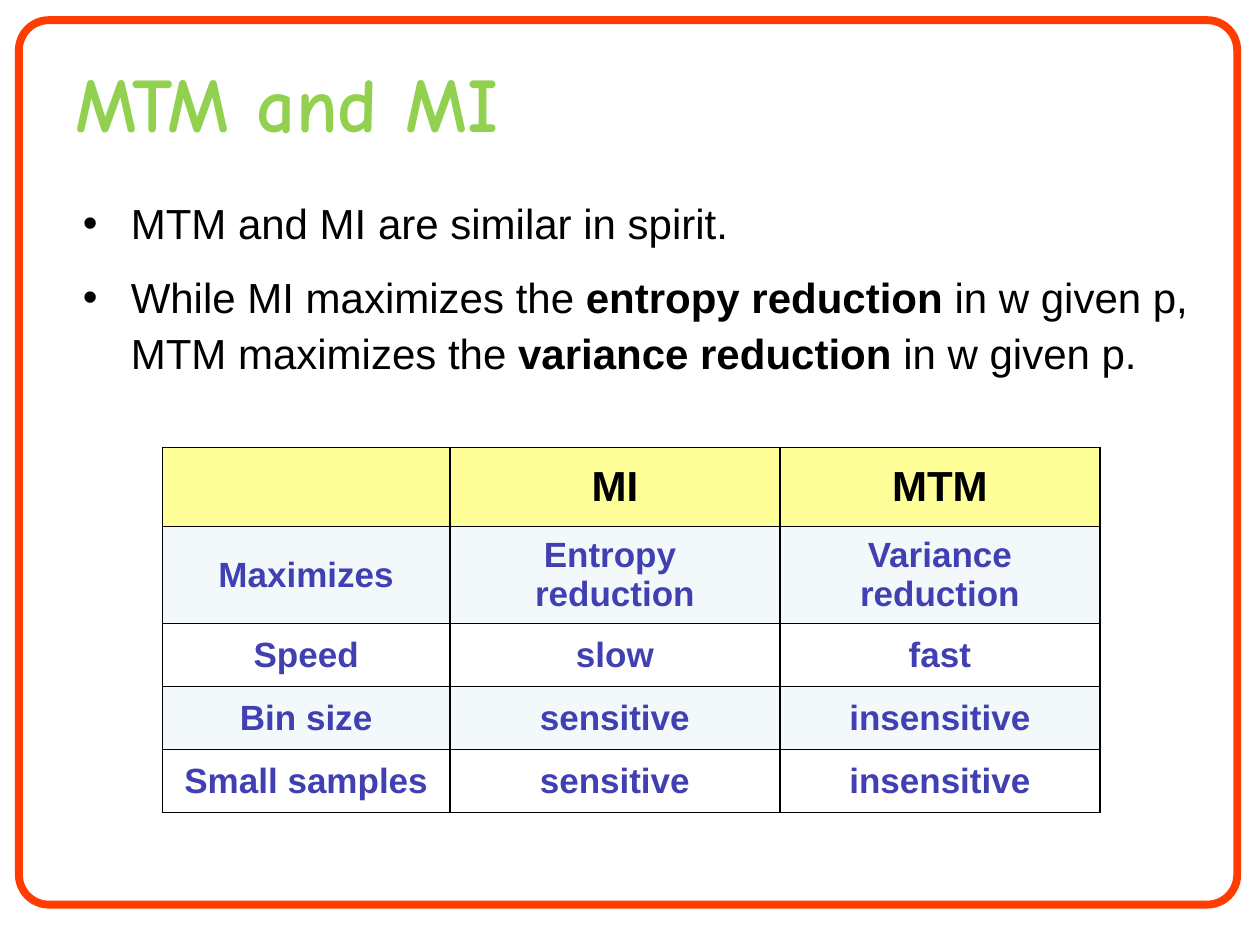
from lxml import etree
from pptx import Presentation
from pptx import util as u
from pptx.dml.color import RGBColor
from pptx.enum import shapes, text
from pptx.oxml import ns

prs = Presentation()
prs.slide_width, prs.slide_height = u.Inches(10), u.Inches(7.5)
W, H = prs.slide_width / 100, prs.slide_height / 100
s = prs.slides.add_slide(prs.slide_layouts[6])


def box(x, y, w, h):
    return [round(v) for v in (x * W, y * H, w * W, h * H)]


def add_run(p, words, size, color, bold=False, font="Arial"):
    r = p.add_run()
    r.text = words
    r.font.name, r.font.size, r.font.bold = font, u.Pt(size), bold
    r.font.color.rgb = RGBColor.from_string(color)


frame = s.shapes.add_shape(shapes.MSO_SHAPE.ROUNDED_RECTANGLE, *box(1.5, 2.13, 96.7, 93.6))
frame.adjustments[0] = 0.034
frame.shadow.inherit = False
frame.fill.background()
frame.line.color.rgb = RGBColor.from_string("FF3D01")
frame.line.width = u.Pt(4.5)

body = s.shapes.add_textbox(*box(5.6, 19.73, 90, 74.53))
tf = body.text_frame
tf.word_wrap = True
bullets = [
    ["MTM and MI are similar in spirit."],
    ["While MI maximizes the ", "entropy reduction ", "in w given p, MTM maximizes the ",
     "variance reduction ", "in w given p."],
]
for i, parts in enumerate(bullets):
    p = tf.add_paragraph() if i else tf.paragraphs[0]
    p.line_spacing, p.space_before, p.space_after = 1.1, u.Pt(4.8), u.Pt(6)
    pPr = p._p.get_or_add_pPr()
    pPr.set("marL", str(u.Inches(0.38)))
    pPr.set("indent", str(-u.Inches(0.38)))
    etree.SubElement(pPr, ns.qn("a:buFont")).set("typeface", "Arial")
    etree.SubElement(pPr, ns.qn("a:buChar")).set("char", "•")
    for j, words in enumerate(parts):
        add_run(p, words, 24, "000000", j % 2 == 1)

title = s.shapes.add_textbox(*box(5, 5.2, 89.4, 11.2))
tf = title.text_frame
tf.word_wrap = True
tf.vertical_anchor = text.MSO_ANCHOR.MIDDLE
add_run(tf.paragraphs[0], "MTM and MI", 44, "92D050", True, "Comic Neue")

rows = [
    ["", "MI", "MTM"],
    ["Maximizes", "Entropy  reduction", "Variance reduction"],
    ["Speed", "slow", "fast"],
    ["Bin size", "sensitive", "insensitive"],
    ["Small samples", "sensitive", "insensitive"],
]
table = s.shapes.add_table(5, 3, *box(12.9, 47.33, 74.4, 38.67)).table
for col, width in zip(table.columns, [22.8, 26.2, 25.4]):
    col.width = round(width * W)
for row, height in zip(table.rows, [8.4, 10.27] + [6.67] * 3):
    row.height = round(height * H)
for i, row in enumerate(rows):
    size, color = (20, "4040B3") if i else (24, "000000")
    fill = ("F3F9FA" if i % 2 else "FFFFFF") if i else "FFFF99"
    for j, words in enumerate(row):
        cell = table.cell(i, j)
        cell.vertical_anchor = text.MSO_ANCHOR.MIDDLE
        tcPr = cell._tc.get_or_add_tcPr()
        for side in ("lnL", "lnR", "lnT", "lnB"):
            ln = etree.SubElement(tcPr, ns.qn("a:" + side), w=str(u.Pt(1)))
            paint = etree.SubElement(ln, ns.qn("a:solidFill"))
            etree.SubElement(paint, ns.qn("a:srgbClr")).set("val", "000000")
        cell.fill.solid()
        cell.fill.fore_color.rgb = RGBColor.from_string(fill)
        p = cell.text_frame.paragraphs[0]
        p.alignment = text.PP_ALIGN.CENTER
        if words:
            add_run(p, words, size, color, True)

prs.save("out.pptx")
